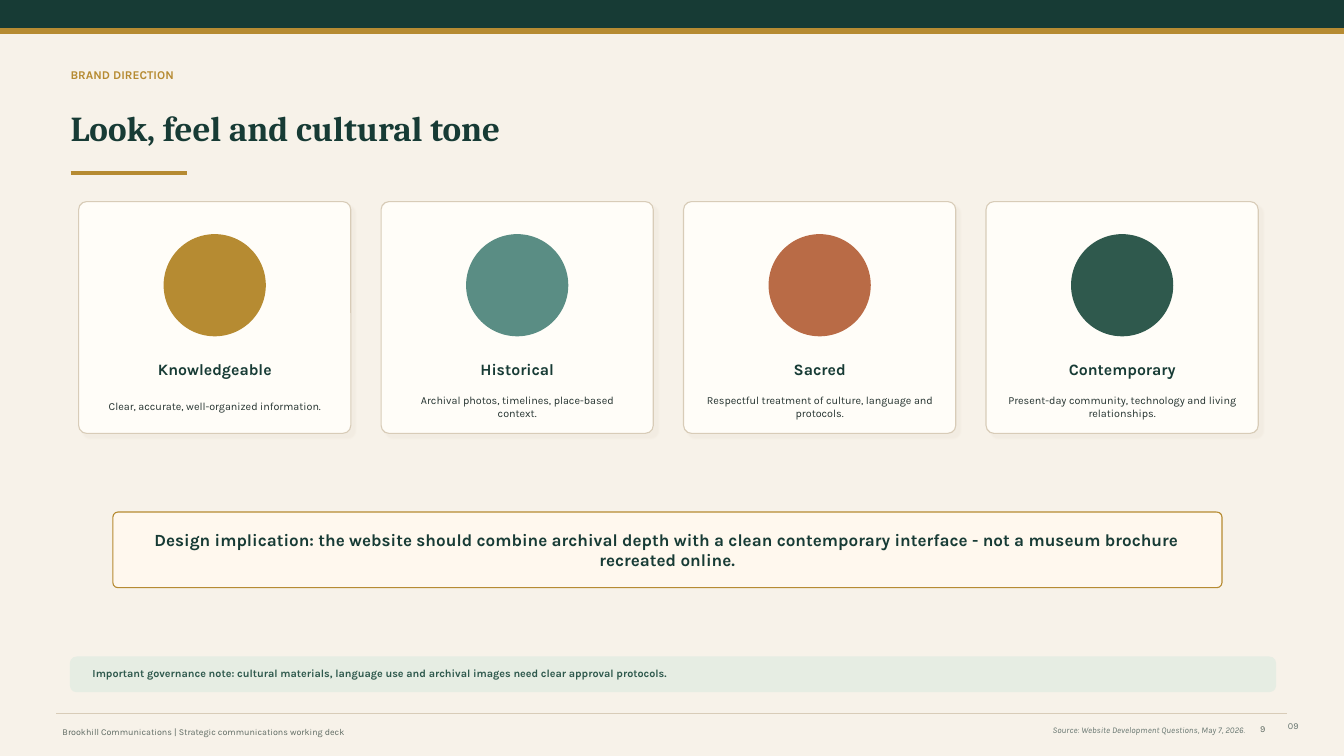
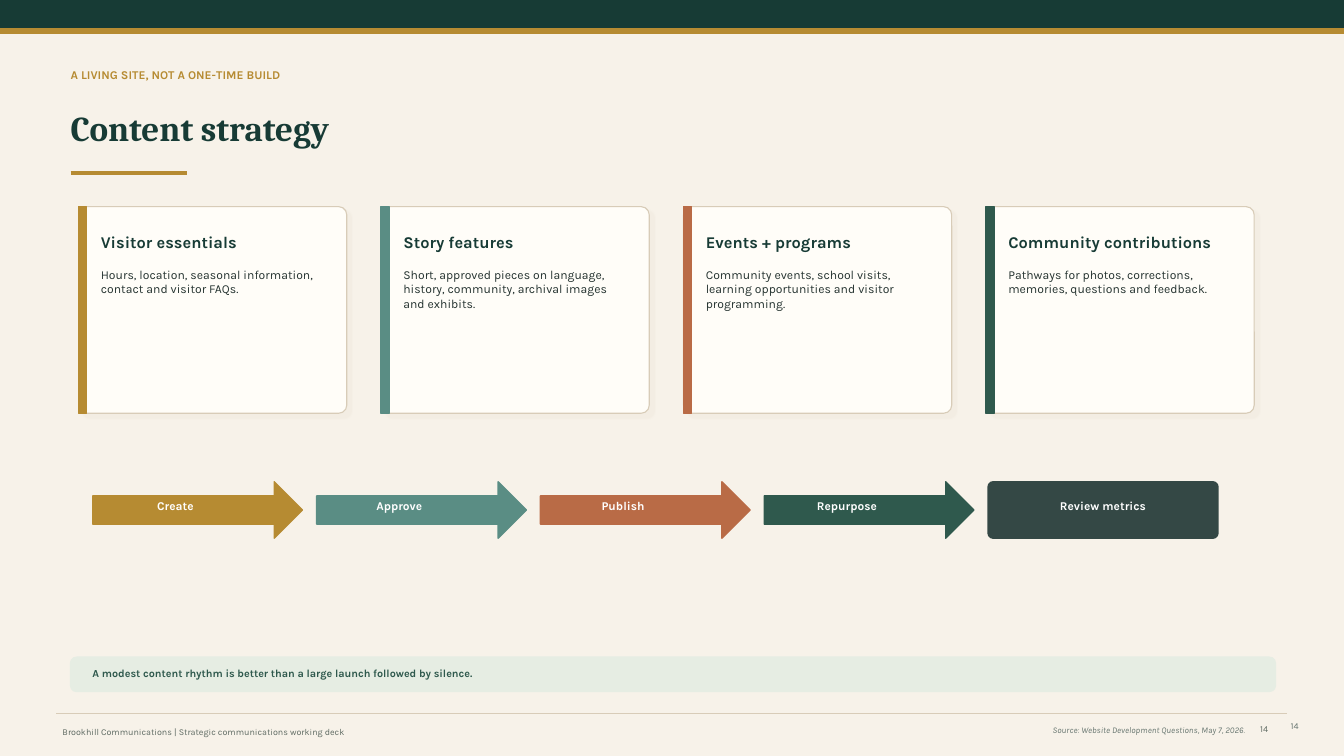
import lxml.etree
import pptx
import pptx.dml.color
import pptx.enum.shapes
import pptx.enum.text
import pptx.oxml.ns
import pptx.util

Inches = pptx.util.Inches
Pt = pptx.util.Pt
SHAPE = pptx.enum.shapes.MSO_SHAPE
ALIGN = pptx.enum.text.PP_ALIGN
ANCHOR = pptx.enum.text.MSO_ANCHOR

GREEN, GOLD, TEAL, RUST, FOREST = "173B35", "B68B32", "5A8D84", "B96B46", "2F594D"
SLATE, INK, MIST, CREAM, SAND = "344845", "253330", "E6EDE3", "FFFDF8", "D8CCB8"
FOOTER_GRAY, SOURCE_GRAY = "5F6B63", "66756F"
ACCENTS = [GOLD, TEAL, RUST, FOREST]
COLUMN_LEFT, COLUMN_STEP = 0.78, 3.0


def rgb(value):
    return pptx.dml.color.RGBColor.from_string(value)


class Deck:
    """Holds the presentation, its style and the current slide."""

    heading_font = "Cambria"
    body_font = "Karla"

    def __init__(self):
        self.presentation = pptx.Presentation()
        self.presentation.slide_width = Inches(13.33)
        self.presentation.slide_height = Inches(7.5)
        background = self.presentation.slide_master.background.fill
        background.solid()
        background.fore_color.rgb = rgb("F7F2E9")
        self.slide = None

    def set_text(self, shape, text, size, color, bold=False, italic=False, align=ALIGN.LEFT,
                 anchor=ANCHOR.MIDDLE, font=None, insets=(0, 0, 0, 0)):
        frame = shape.text_frame
        frame.text = text
        frame.word_wrap = True
        frame.auto_size = pptx.enum.text.MSO_AUTO_SIZE.NONE
        frame.vertical_anchor = anchor
        (frame.margin_left, frame.margin_top,
         frame.margin_right, frame.margin_bottom) = [Inches(inset) for inset in insets]
        paragraph = frame.paragraphs[0]
        paragraph.alignment = align
        paragraph.font.name = font or self.body_font
        paragraph.font.size = Pt(size)
        paragraph.font.bold = bold
        paragraph.font.italic = italic
        paragraph.font.color.rgb = rgb(color)

    def text(self, box, text, size, color, **style):
        shape = self.slide.shapes.add_textbox(*[Inches(length) for length in box])
        self.set_text(shape, text, size, color, **style)

    def shape(self, kind, box, fill, line=None, line_width=1, radius=None):
        shape = self.slide.shapes.add_shape(kind, *[Inches(length) for length in box])
        shape.shadow.inherit = False
        shape.fill.solid()
        shape.fill.fore_color.rgb = rgb(fill)
        shape.line.color.rgb = rgb(line or fill)
        shape.line.width = Pt(line_width)
        if radius:
            shape.adjustments[0] = radius / min(box[2:])
        return shape

    def line(self, left, right, y, color, width):
        connector = self.slide.shapes.add_connector(
            pptx.enum.shapes.MSO_CONNECTOR.STRAIGHT,
            Inches(left), Inches(y), Inches(right), Inches(y))
        connector.line.color.rgb = rgb(color)
        connector.line.width = Pt(width)
        lxml.etree.SubElement(connector._element.spPr, pptx.oxml.ns.qn("a:effectLst"))

    def card(self, box, shadow_percent):
        card = self.shape(SHAPE.ROUNDED_RECTANGLE, box, CREAM, SAND, 0.8, radius=0.08)
        qn = pptx.oxml.ns.qn
        effects = card._element.spPr.find(qn("a:effectLst"))
        shadow = lxml.etree.SubElement(
            effects, qn("a:outerShdw"), blurRad=str(Pt(1)), dist=str(Pt(4)),
            dir=str(45 * 60000), algn="tl", rotWithShape="0")
        color = lxml.etree.SubElement(shadow, qn("a:srgbClr"), val="D7C9B5")
        lxml.etree.SubElement(color, qn("a:alpha"), val=str(shadow_percent * 1000))

    def new_slide(self, number, kicker, title, note):
        self.slide = self.presentation.slides.add_slide(self.presentation.slide_layouts[5])

        # Bands at the top
        self.shape(SHAPE.RECTANGLE, (0, 0, 13.33, 0.28), GREEN)
        self.shape(SHAPE.RECTANGLE, (0, 0.28, 13.33, 0.05), GOLD)

        # Heading
        self.text((0.7, 0.62, 8.5, 0.24), kicker, 8.5, GOLD, bold=True)
        heading = self.slide.shapes.title
        heading.left, heading.top = Inches(0.7), Inches(0.92)
        heading.width, heading.height = Inches(9.65), Inches(0.68)
        self.set_text(heading, title, 25, GREEN, bold=True, font=self.heading_font)
        self.line(0.7, 1.85, 1.72, GOLD, 3)

        # Note strip
        strip = self.shape(SHAPE.ROUNDED_RECTANGLE, (0.7, 6.52, 11.95, 0.34), MIST, radius=0.06)
        self.set_text(strip, note, 7.7, FOREST, bold=True, insets=(0.2, 0, 0.2, 0.02))

        # Footer
        self.line(0.56, 12.76, 7.08, SAND, 0.5)
        self.text((0.62, 7.17, 7.5, 0.18),
                  "Brookhill Communications | Strategic communications working deck",
                  6.4, FOOTER_GRAY)
        self.text((9, 7.17, 3.35, 0.15), "Source: Website Development Questions, May 7, 2026.",
                  6.2, SOURCE_GRAY, italic=True, align=ALIGN.RIGHT)
        self.text((12.53, 7.13, 0.35, 0.15), f"{number:02d}", 6.5, SOURCE_GRAY,
                  align=ALIGN.RIGHT)
        self.text((12.4, 7.13, 0.87, 0.33), str(number), 6.5, FOOTER_GRAY,
                  anchor=ANCHOR.TOP, insets=(0.1, 0.05, 0.1, 0.05))

    def tone_card(self, left, color, name, description):
        self.card((left, 2, 2.7, 2.3), 12)
        self.shape(SHAPE.OVAL, (left + 0.85, 2.33, 1, 1), color)
        self.text((left + 0.16, 3.55, 2.38, 0.22), name, 11.3, GREEN, bold=True,
                  align=ALIGN.CENTER)
        self.text((left + 0.22, 3.92, 2.26, 0.22), description, 7.7, INK, align=ALIGN.CENTER)

    def content_card(self, left, color, name, description):
        self.card((left, 2.05, 2.66, 2.05), 11)
        self.shape(SHAPE.RECTANGLE, (left, 2.05, 0.08, 2.05), color)
        self.text((left + 0.22, 2.23, 2.22, 0.34), name, 11.7, GREEN, bold=True)
        self.text((left + 0.22, 2.65, 2.22, 1.33), description, 8.7, INK, anchor=ANCHOR.TOP)

    def card_row(self, draw_card, entries):
        for column, (color, entry) in enumerate(zip(ACCENTS, entries)):
            draw_card(COLUMN_LEFT + column * COLUMN_STEP, color, *entry)

    def step(self, kind, left, width, color, label, right_inset=0, radius=None):
        step = self.shape(kind, (left, 4.78, width, 0.56), color, radius=radius)
        self.set_text(step, label, 8.5, "FFFFFF", bold=True, align=ALIGN.CENTER,
                      insets=(0, 0, right_inset, 0.08))


def build_tone_slide(deck):
    deck.new_slide(9, "BRAND DIRECTION", "Look, feel and cultural tone",
                   "Important governance note: cultural materials, language use and archival "
                   "images need clear approval protocols.")
    deck.card_row(deck.tone_card, [
        ("Knowledgeable", "Clear, accurate, well-organized information."),
        ("Historical", "Archival photos, timelines, place-based context."),
        ("Sacred", "Respectful treatment of culture, language and protocols."),
        ("Contemporary", "Present-day community, technology and living relationships."),
    ])

    # Design implication
    banner = deck.shape(SHAPE.ROUNDED_RECTANGLE, (1.12, 5.08, 11, 0.75), "FFF8EE", GOLD, 0.8,
                        radius=0.05)
    deck.set_text(banner, "Design implication: the website should combine archival depth with a "
                  "clean contemporary interface - not a museum brochure recreated online.",
                  12.2, GREEN, bold=True, align=ALIGN.CENTER, insets=(0.31, 0, 0.31, 0))


def build_content_slide(deck):
    deck.new_slide(14, "A LIVING SITE, NOT A ONE-TIME BUILD", "Content strategy",
                   "A modest content rhythm is better than a large launch followed by silence.")
    deck.card_row(deck.content_card, [
        ("Visitor essentials",
         "Hours, location, seasonal information, contact and visitor FAQs."),
        ("Story features",
         "Short, approved pieces on language, history, community, archival images and exhibits."),
        ("Events + programs",
         "Community events, school visits, learning opportunities and visitor programming."),
        ("Community contributions",
         "Pathways for photos, corrections, memories, questions and feedback."),
    ])

    # Publishing process
    first_left, pitch = 0.92, 2.22
    labels = ["Create", "Approve", "Publish", "Repurpose"]
    for index, (color, label) in enumerate(zip(ACCENTS, labels)):
        deck.step(SHAPE.RIGHT_ARROW, first_left + index * pitch, 2.08, color, label,
                  right_inset=0.3)
    deck.step(SHAPE.ROUNDED_RECTANGLE, first_left + len(labels) * pitch, 2.28, SLATE,
              "Review metrics", radius=0.05)


def main():
    deck = Deck()
    build_tone_slide(deck)
    build_content_slide(deck)
    deck.presentation.save("out.pptx")


if __name__ == "__main__":
    main()
